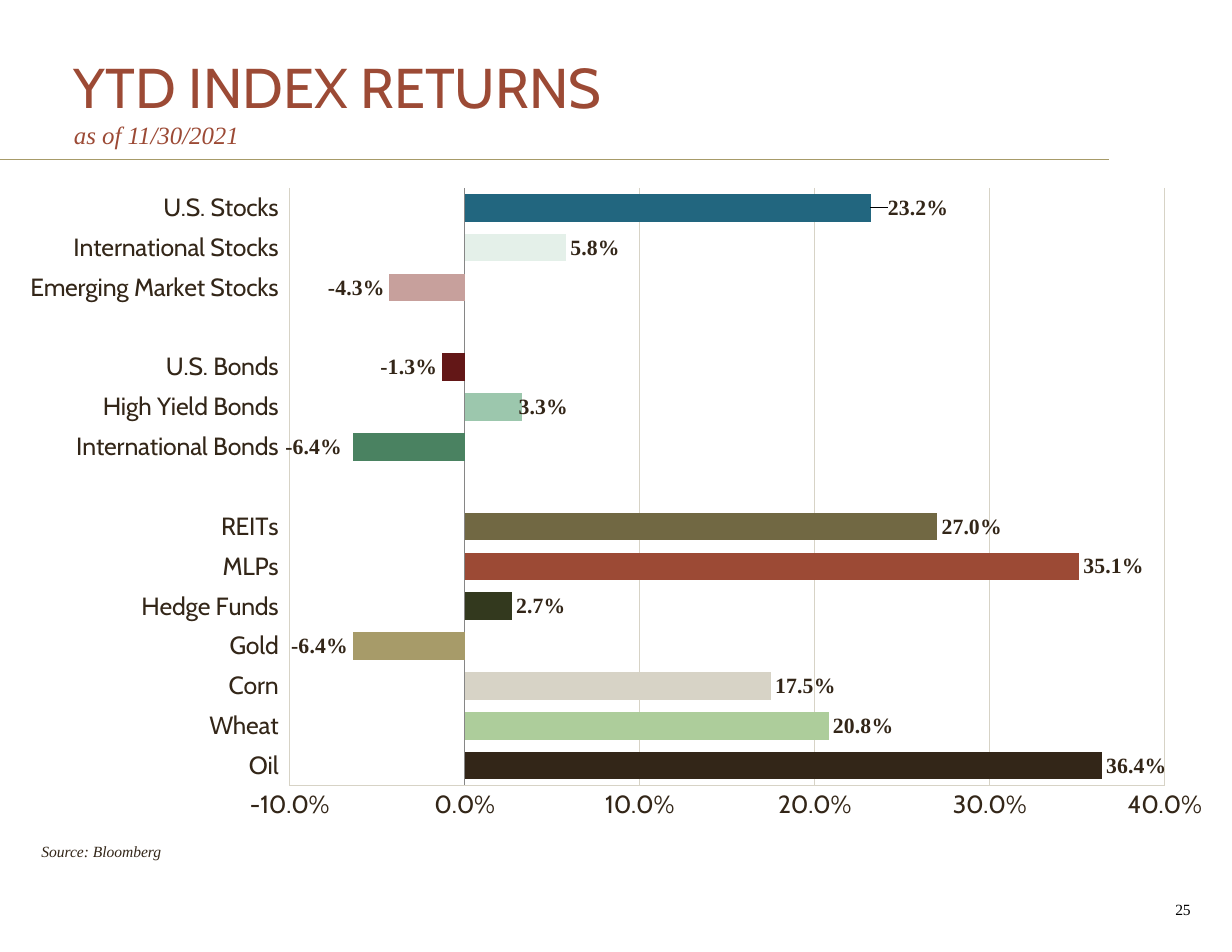
from lxml import etree
from pptx import Presentation
from pptx.chart.data import CategoryChartData
from pptx.dml.color import RGBColor
from pptx.enum.chart import XL_CHART_TYPE, XL_LABEL_POSITION, XL_TICK_LABEL_POSITION, XL_TICK_MARK
from pptx.enum.shapes import MSO_CONNECTOR
from pptx.enum.text import MSO_ANCHOR, MSO_AUTO_SIZE, PP_ALIGN
from pptx.oxml import parse_xml
from pptx.oxml.ns import nsdecls, qn
from pptx.util import Inches, Pt

BAR = XL_CHART_TYPE.BAR_CLUSTERED
OUTSIDE_END = XL_LABEL_POSITION.OUTSIDE_END
LOW = XL_TICK_LABEL_POSITION.LOW
NO_TICK = XL_TICK_MARK.NONE
STRAIGHT = MSO_CONNECTOR.STRAIGHT
MIDDLE = MSO_ANCHOR.MIDDLE
NO_FIT = MSO_AUTO_SIZE.NONE
LEFT, RIGHT = PP_ALIGN.LEFT, PP_ALIGN.RIGHT

SANS, SERIF = "Cabin", "Times New Roman"
RUST, BROWN, GOLD, STONE = "9C4A35", "332618", "A79B69", "D7D3C6"
PERCENT = "0.0%"

# Category, return, bar colour, from the bottom of the chart up
RETURNS = [
    ("Oil", 0.364, BROWN),
    ("Wheat", 0.208, "ADCD9B"),
    ("Corn", 0.175, STONE),
    ("Gold", -0.064, GOLD),
    ("Hedge Funds", 0.027, "33391E"),
    ("MLPs", 0.351, RUST),
    ("REITs", 0.27, "716843"),
    ("", None, None),
    ("International Bonds", -0.064, "4A8261"),
    ("High Yield Bonds", 0.033, "9CC7AD"),
    ("U.S. Bonds", -0.013, "631717"),
    ("", None, None),
    ("Emerging Market Stocks", -0.043, "C7A09C"),
    ("International Stocks", 0.058, "E4F0E9"),
    ("U.S. Stocks", 0.232, "22667F"),
]
# Sideways label shifts, as a share of the chart width
LABEL_SHIFTS = {"International Bonds": -0.005, "High Yield Bonds": -0.007, "U.S. Stocks": 0.011}
PLOT_AREA = {"x": 0.22, "y": 0.03, "w": 0.75, "h": 0.9}


def rgb(value):
    return RGBColor.from_string(value)


def style_font(font, name, size, color, **extra):
    values = {"name": name, "size": Pt(size), **extra}
    for key, value in values.items():
        setattr(font, key, value)
    font.color.rgb = rgb(color)


def style_line(line, color, width):
    line.color.rgb = rgb(color)
    line.width = Pt(width)


def set_insets(tf):
    for side, inset in {"left": 0.11, "top": 0.06, "right": 0.11, "bottom": 0.06}.items():
        setattr(tf, f"margin_{side}", Inches(inset))


def add_title(slide, box):
    sp = slide.shapes.title
    sp.left, sp.top, sp.width, sp.height = map(Inches, box)
    tf = sp.text_frame
    tf.auto_size, tf.word_wrap, tf.vertical_anchor = NO_FIT, True, MIDDLE
    set_insets(tf)
    p = tf.paragraphs[0]
    p.alignment = LEFT
    r = p.add_run()
    r.text = "YTD INDEX RETURNS"
    style_font(r.font, SANS, 36, RUST)
    p.add_line_break()
    r = p.add_run()
    r.text = "as of 11/30/2021"
    style_font(r.font, SERIF, 16, RUST, italic=True)


def add_rule(slide, left, right, y):
    line = slide.shapes.add_connector(STRAIGHT, Inches(left), Inches(y), Inches(right), Inches(y))
    style_line(line.line, GOLD, 0.5)
    etree.SubElement(line._element.spPr, qn("a:effectLst"))


def add_note(slide, box, text, color, align=LEFT, italic=False):
    tf = slide.shapes.add_textbox(*map(Inches, box)).text_frame
    tf.word_wrap = True
    p = tf.paragraphs[0]
    p.alignment = align
    r = p.add_run()
    r.text = text
    style_font(r.font, SERIF, 10, color, italic=italic)
    return tf


def manual_layout(values, inner=False):
    parts = '<c:layoutTarget val="inner"/><c:xMode val="edge"/><c:yMode val="edge"/>' if inner else ""
    parts += "".join(f'<c:{key} val="{value}"/>' for key, value in values.items())
    return parse_xml(f'<c:layout {nsdecls("c")}><c:manualLayout>{parts}</c:manualLayout></c:layout>')


def style_axes(chart):
    cat, val = chart.category_axis, chart.value_axis
    for axis in (cat, val):
        axis.major_tick_mark = axis.minor_tick_mark = NO_TICK
        style_font(axis.tick_labels.font, SANS, 16, BROWN)
    cat.tick_label_position = LOW
    cat.has_major_gridlines = False
    style_line(cat.format.line, "868686", 1)
    val.minimum_scale, val.maximum_scale, val.major_unit = -0.1, 0.4, 0.1
    val.tick_labels.number_format = PERCENT
    val.tick_labels.number_format_is_linked = False
    val.has_major_gridlines = True
    for line in (val.format.line, val.major_gridlines.format.line):
        style_line(line, STONE, 0.75)


def style_bars(plot):
    plot.gap_width = 44
    plot.vary_by_categories = False
    series = plot.series[0]
    series.invert_if_negative = False
    labels = series.data_labels
    labels.show_value = True
    labels.position = OUTSIDE_END
    labels.number_format = PERCENT
    labels.number_format_is_linked = False
    style_font(labels.font, SERIF, 14, BROWN, bold=True)
    for i, (name, _, color) in enumerate(RETURNS):
        if not color:
            continue
        point = series.points[i]
        point.format.fill.solid()
        point.format.fill.fore_color.rgb = rgb(color)
        if name in LABEL_SHIFTS:
            label = point.data_label
            label.position = OUTSIDE_END
            style_font(label.font, SERIF, 14, BROWN, bold=True)
            idx = labels._element.xpath(f'c:dLbl/c:idx[@val="{i}"]')[0]
            idx.addnext(manual_layout({"x": LABEL_SHIFTS[name], "y": 0}))


def add_returns_chart(slide, box):
    data = CategoryChartData(number_format=PERCENT)
    data.categories = [name for name, _, _ in RETURNS]
    data.add_series("Series 1", [value for _, value, _ in RETURNS])
    chart = slide.shapes.add_chart(BAR, *map(Inches, box), data).chart
    chart.has_legend = chart.has_title = False
    style_font(chart.font, "Calibri", 18, "000000")
    style_axes(chart)
    style_bars(chart.plots[0])
    plot_area = chart._chartSpace.chart.plotArea
    for old in plot_area.findall(qn("c:layout")):
        plot_area.remove(old)
    plot_area.insert(0, manual_layout(PLOT_AREA, inner=True))


def main():
    prs = Presentation()
    prs.slide_width, prs.slide_height = Inches(11), Inches(8.5)
    slide = prs.slides.add_slide(prs.slide_layouts[5])
    add_rule(slide, 0, 9.9, 1.42)
    add_title(slide, (0.55, 0.38, 9.26, 1.04))
    page = add_note(slide, (8.16, 7.89, 2.57, 0.45), "25", "000000", align=RIGHT)
    page.vertical_anchor = MIDDLE
    add_returns_chart(slide, (0.27, 1.5, 10.46, 5.93))
    source = add_note(slide, (0.26, 7.46, 2.58, 0.28), "Source: Bloomberg", BROWN, italic=True)
    set_insets(source)
    prs.save("out.pptx")


if __name__ == "__main__":
    main()
